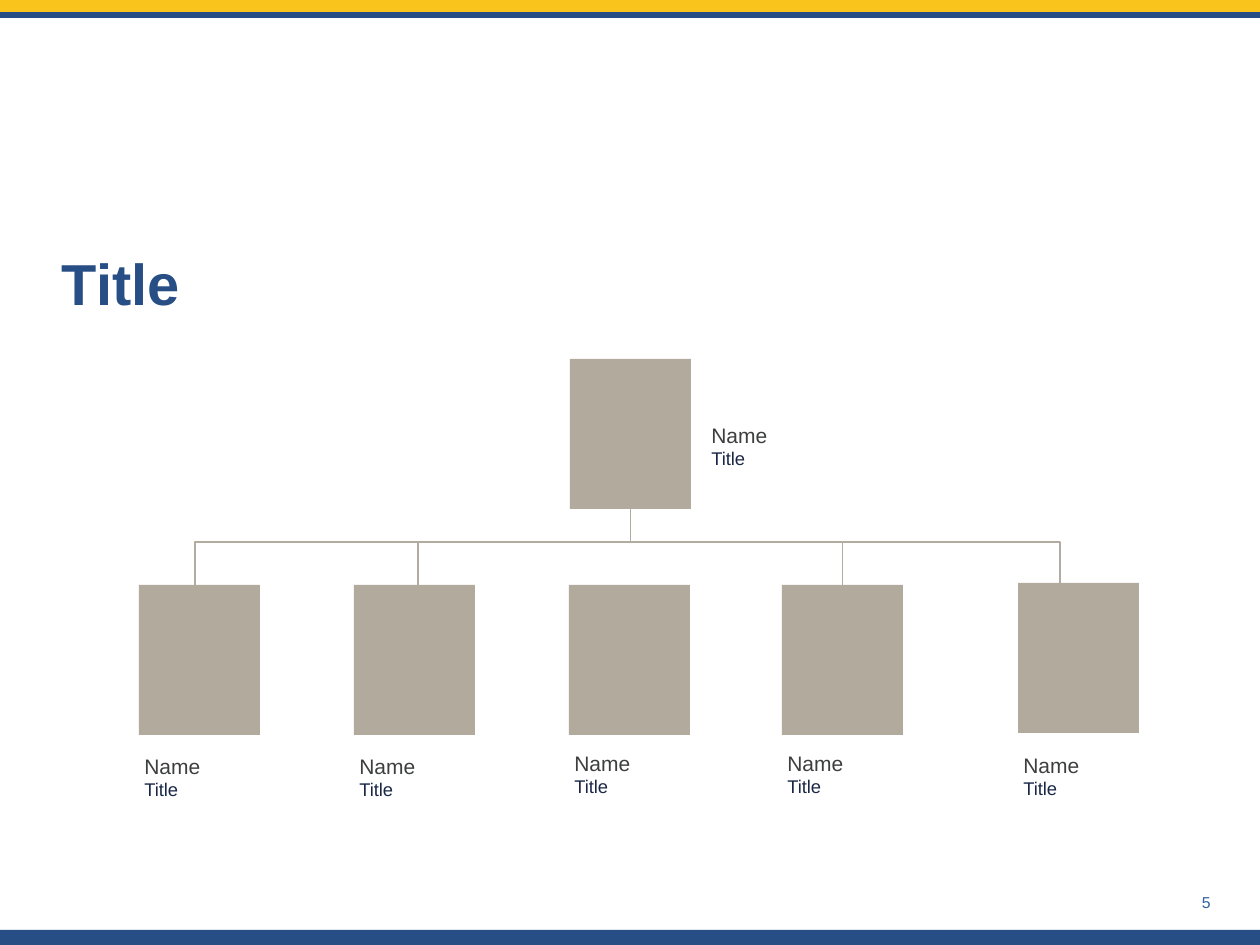
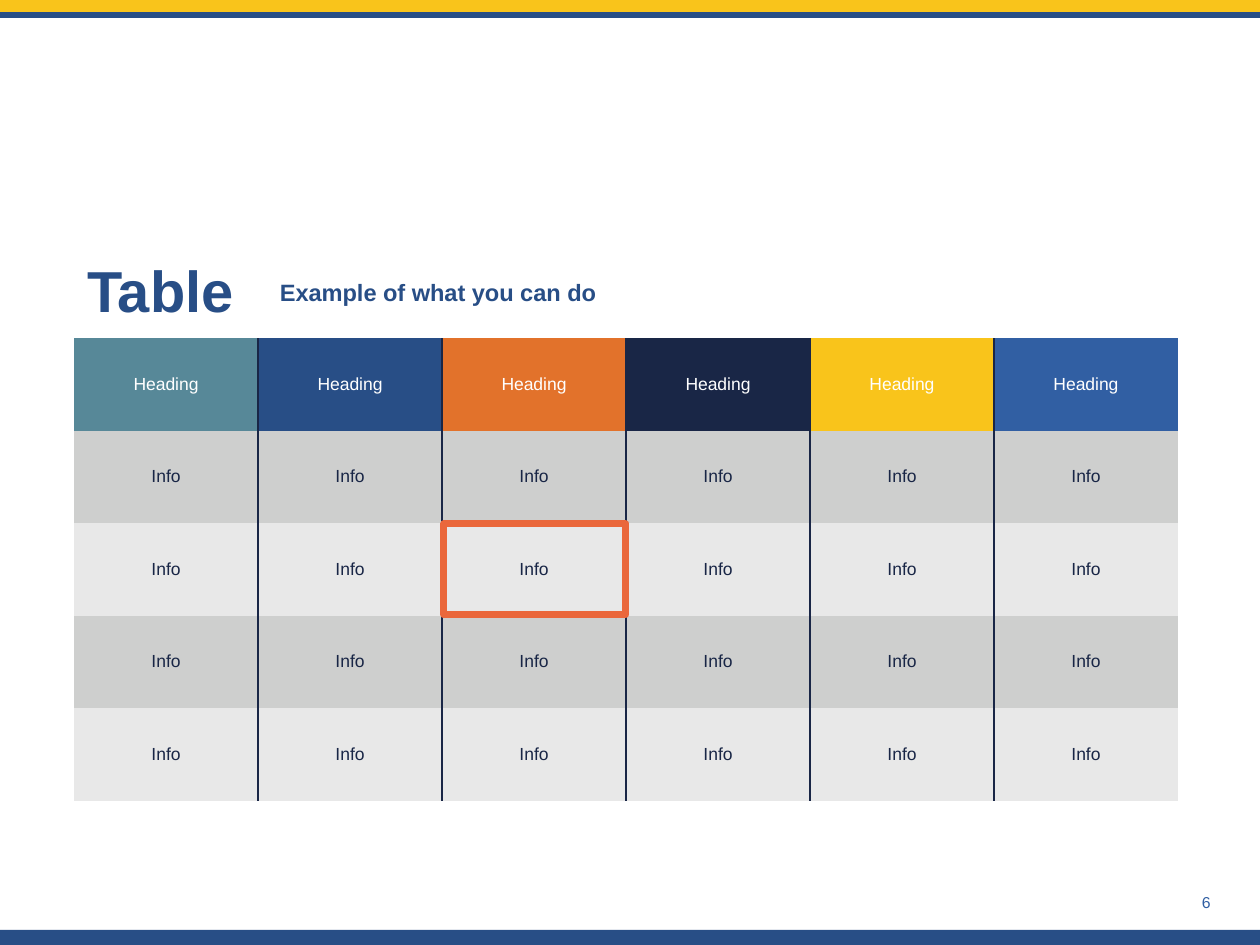
from dataclasses import dataclass

from lxml.etree import SubElement
from pptx import Presentation
from pptx.dml.color import RGBColor
from pptx.enum.shapes import MSO_CONNECTOR as Connector, MSO_SHAPE as Preset
from pptx.enum.text import MSO_ANCHOR as Anchor, MSO_AUTO_SIZE as AutoSize, PP_ALIGN as Align
from pptx.oxml import parse_xml
from pptx.oxml.ns import nsdecls, qn
from pptx.util import Emu, Pt

FONT = "Arial"
BLUE, YELLOW, NAVY, ROYAL = "284E86", "F9C41B", "192646", "315FA3"
TEAL, ORANGE, HIGHLIGHT, WHITE = "578898", "E2722B", "EA673B", "FFFFFF"
PORTRAIT, BRANCH, NAME_GREY = "B2AA9C", "B2AB9F", "3D3F3E"
DARK_ROW, LIGHT_ROW = "CECFCE", "E8E8E8"
PLAIN_TABLE = "{2D5ABB26-0587-4C30-8999-92F81FD0307C}"
EMU_PER_PX = 914400 / 126
TITLE_ONLY = 5


@dataclass(frozen=True)
class Box:
    left: int
    top: int
    width: int
    height: int

    def emu(self) -> list[Emu]:
        return [px(v) for v in (self.left, self.top, self.width, self.height)]


@dataclass(frozen=True)
class TextStyle:
    size: float
    color: str
    bold: bool = False
    align: Align = Align.LEFT
    spacing: float = 1.0


@dataclass(frozen=True)
class Person:
    portrait: Box
    label: Box


TITLE = TextStyle(33, BLUE, bold=True, spacing=0.9)
SUBTITLE = TextStyle(13.5, BLUE, bold=True, spacing=0.9)
PERSON_NAME = TextStyle(12, NAME_GREY)
PERSON_TITLE = TextStyle(10.5, NAVY)
PAGE_NUMBER = TextStyle(9, ROYAL, align=Align.RIGHT)
HEADING = TextStyle(10, WHITE, align=Align.CENTER)
INFO = TextStyle(10, NAVY, align=Align.CENTER)

BANDS = [
    (Box(0, 930, 1260, 15), BLUE),
    (Box(0, 0, 1260, 15), YELLOW),
    (Box(0, 12, 1260, 6), BLUE),
]


def person(left: int, top: int, label_left: int, label_top: int) -> Person:
    return Person(Box(left, top, 121, 150), Box(label_left, label_top, 165, 83))


LEADER = person(570, 359, 699, 416)
TEAM = [
    person(left, top, left - 7, label_top)
    for left, top, label_top in [
        (139, 585, 747),
        (354, 585, 747),
        (569, 585, 744),
        (782, 585, 744),
        (1018, 583, 746),
    ]
]
BRANCH_TOP = 542
BRANCH_LEFT, BRANCH_RIGHT = 195, 1060

HEADING_COLORS = [TEAL, BLUE, ORANGE, NAVY, YELLOW, ROYAL]
INFO_ROWS = 4


def px(value: float) -> Emu:
    return Emu(round(value * EMU_PER_PX))


def rgb(color: str) -> RGBColor:
    return RGBColor.from_string(color)


def set_insets(holder, across: int, down: int) -> None:
    holder.margin_left = holder.margin_right = px(across)
    holder.margin_top = holder.margin_bottom = px(down)


def write(frame, lines: list[tuple[str, TextStyle]]) -> None:
    frame.text = "\n".join(text for text, _ in lines)
    for paragraph, (_, style) in zip(frame.paragraphs, lines):
        paragraph.alignment = style.align
        paragraph.line_spacing = style.spacing
        for run in paragraph.runs:
            run.font.name = FONT
            run.font.size = Pt(style.size)
            run.font.bold = style.bold
            run.font.color.rgb = rgb(style.color)


def add_text(slide, box: Box, lines: list[tuple[str, TextStyle]], anchor: Anchor = Anchor.TOP):
    frame = slide.shapes.add_textbox(*box.emu()).text_frame
    frame.word_wrap = True
    frame.vertical_anchor = anchor
    write(frame, lines)
    return frame


def add_block(slide, box: Box, color: str):
    block = slide.shapes.add_shape(Preset.RECTANGLE, *box.emu())
    block.shadow.inherit = False
    block.fill.solid()
    block.fill.fore_color.rgb = rgb(color)
    block.line.fill.background()
    return block


def style_branch(branch) -> None:
    branch.line.color.rgb = rgb(BRANCH)
    branch.line.width = Pt(1)


def add_branch(slide, x: int, top: int, bottom: int):
    branch = slide.shapes.add_connector(Connector.STRAIGHT, px(x), px(top), px(x), px(bottom))
    style_branch(branch)
    SubElement(branch.element.spPr, qn("a:effectLst"))
    return branch


def add_bands(slide) -> None:
    layout_tree = slide.slide_layout.shapes.element
    for number, (box, color) in enumerate(BANDS, start=100):
        band = add_block(slide, box, color).element
        band.nvSpPr.cNvPr.set("id", str(number))
        layout_tree.append(band)


def start_slide(deck, title: str, title_box: Box, insets: tuple[int, int], page: int):
    slide = deck.slides.add_slide(deck.slide_layouts[TITLE_ONLY])
    heading = slide.shapes.title
    heading.left, heading.top, heading.width, heading.height = title_box.emu()
    frame = heading.text_frame
    frame.word_wrap = True
    frame.auto_size = AutoSize.NONE
    frame.vertical_anchor = Anchor.MIDDLE
    set_insets(frame, *insets)
    write(frame, [(title, TITLE)])
    add_text(slide, Box(948, 877, 275, 50), [(str(page), PAGE_NUMBER)], Anchor.MIDDLE)
    return slide


def add_person(slide, member: Person):
    label = add_text(slide, member.label, [("Name", PERSON_NAME), ("Title", PERSON_TITLE)])
    label.auto_size = AutoSize.SHAPE_TO_FIT_TEXT
    return add_block(slide, member.portrait, PORTRAIT)


def build_org_chart(slide) -> None:
    outline = slide.shapes.build_freeform(px(BRANCH_LEFT), px(633))
    outline.add_line_segments(
        [
            (px(BRANCH_LEFT), px(BRANCH_TOP)),
            (px(BRANCH_RIGHT), px(BRANCH_TOP)),
            (px(BRANCH_RIGHT), px(633)),
        ],
        close=False,
    )
    bracket = outline.convert_to_shape()
    bracket.shadow.inherit = False
    bracket.fill.background()
    style_branch(bracket)

    leader = add_person(slide, LEADER)
    team = [add_person(slide, member) for member in TEAM]

    leader_stem = add_branch(slide, 630, 509, BRANCH_TOP)
    leader_stem.begin_connect(leader, 2)
    leader_stem.end_x = leader_stem.begin_x
    add_branch(slide, 418, BRANCH_TOP, 585)
    fourth_stem = add_branch(slide, 842, BRANCH_TOP, 585)
    fourth_stem.end_connect(team[3], 0)
    fourth_stem.begin_x = fourth_stem.end_x


def border_cell(cell, sides: list[str]) -> None:
    properties = cell._tc.get_or_add_tcPr()
    for position, side in enumerate(sides):
        border = parse_xml(
            f'<a:{side} {nsdecls("a")} w="{Pt(1)}"><a:solidFill>'
            f'<a:srgbClr val="{NAVY}"/></a:solidFill></a:{side}>'
        )
        properties.insert(position, border)


def fill_cell(cell, text: str, style: TextStyle, color: str) -> None:
    cell.fill.solid()
    cell.fill.fore_color.rgb = rgb(color)
    cell.vertical_anchor = Anchor.MIDDLE
    set_insets(cell, 9, 5)
    write(cell.text_frame, [(text, style)])


def build_table(slide) -> None:
    columns = len(HEADING_COLORS)
    area = Box(74, 338, 184 * columns, 463)
    table = slide.shapes.add_table(INFO_ROWS + 1, columns, *area.emu()).table
    table.first_row = table.horz_banding = False
    table._tbl.tblPr.find(qn("a:tableStyleId")).text = PLAIN_TABLE
    for row_index in range(INFO_ROWS + 1):
        for column, heading_color in enumerate(HEADING_COLORS):
            cell = table.cell(row_index, column)
            if row_index == 0:
                fill_cell(cell, "Heading", HEADING, heading_color)
            else:
                fill_cell(cell, "Info", INFO, DARK_ROW if row_index % 2 else LIGHT_ROW)
            sides = ["lnL"] if column > 0 else []
            if column < columns - 1:
                sides.append("lnR")
            border_cell(cell, sides)

    highlight = slide.shapes.add_shape(Preset.RECTANGLE, *Box(444, 524, 182, 91).emu())
    highlight.shadow.inherit = False
    highlight.fill.background()
    highlight.line.color.rgb = rgb(HIGHLIGHT)
    highlight.line.width = Pt(4)

    subtitle = add_text(
        slide, Box(271, 248, 732, 91), [("Example of what you can do", SUBTITLE)], Anchor.MIDDLE
    )
    set_insets(subtitle, 9, 5)


def main() -> None:
    deck = Presentation()
    deck.slide_width, deck.slide_height = px(1260), px(945)
    org_slide = start_slide(deck, "Title", Box(53, 246, 1125, 81), (9, 5), 5)
    add_bands(org_slide)
    build_org_chart(org_slide)
    table_slide = start_slide(deck, "Table", Box(74, 248, 198, 91), (13, 6), 6)
    build_table(table_slide)
    deck.save("out.pptx")


if __name__ == "__main__":
    main()
